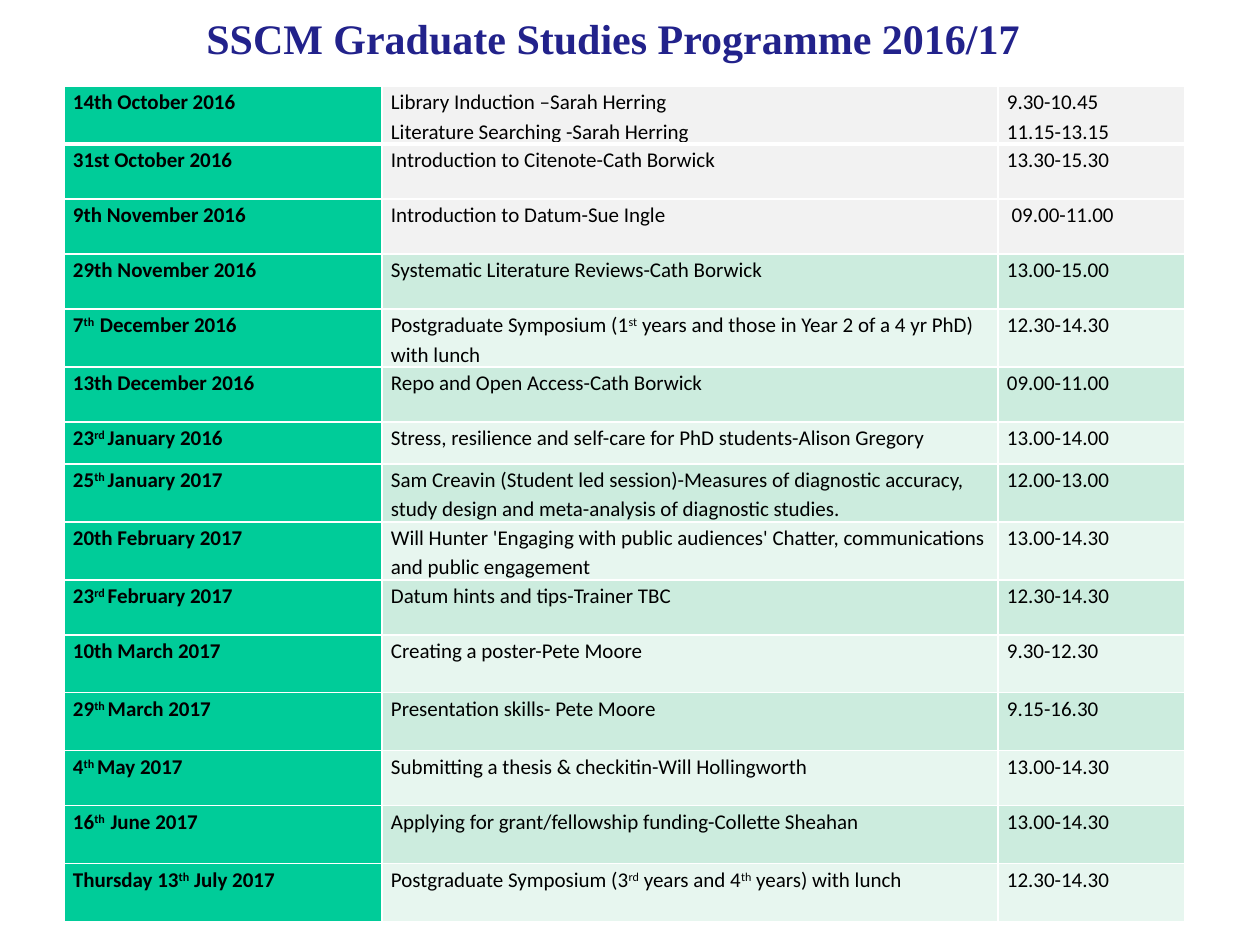
from dataclasses import dataclass

from lxml import etree
from pptx import Presentation
from pptx.dml.color import RGBColor
from pptx.oxml.ns import qn
from pptx.util import Pt

SCALE = 914400 / 126
LEFT, TOP = 64, 86
COLS = (318, 616, 187)
TALL, MID, LOW = 58, 55, 42
GREEN, GREY, MINT, PALE = "00CC99", "F2F2F2", "CCECDE", "E7F6EF"
WHITE, BLACK, NAVY = "FFFFFF", "000000", "22228B"


@dataclass
class Row:
    date: str
    topic: str
    time: str
    high: int = MID


ROWS = [
    Row("14th October 2016",
        "Library Induction –Sarah Herring\nLiterature Searching -Sarah Herring",
        "9.30-10.45\n11.15-13.15", 57),
    Row("31st October 2016", "Introduction to Citenote-Cath Borwick", "13.30-15.30"),
    Row("9th November 2016", "Introduction to Datum-Sue Ingle", " 09.00-11.00"),
    Row("29th November 2016", "Systematic Literature Reviews-Cath Borwick", "13.00-15.00"),
    Row("7^th  ^December 2016",
        "Postgraduate Symposium (1^st^ years and those in Year 2 of a 4 yr PhD) with lunch",
        "12.30-14.30", TALL),
    Row("13th December 2016", "Repo and Open Access-Cath Borwick", "09.00-11.00"),
    Row("23^rd ^January 2016",
        "Stress, resilience and self-care for PhD students-Alison Gregory",
        "13.00-14.00", LOW),
    Row("25^th ^January 2017",
        "Sam Creavin (Student led session)-Measures of diagnostic accuracy, "
        "study design and meta-analysis of diagnostic studies.",
        "12.00-13.00", TALL),
    Row("20th February 2017",
        "Will Hunter 'Engaging with public audiences' Chatter, communications "
        "and public engagement",
        "13.00-14.30", TALL),
    Row("23^rd ^February 2017", "Datum hints and tips-Trainer TBC", "12.30-14.30"),
    Row("10th March 2017", "Creating a poster-Pete Moore", "9.30-12.30", TALL),
    Row("29^th ^March 2017", "Presentation skills- Pete Moore", "9.15-16.30", TALL),
    Row("4^th ^May 2017", "Submitting a thesis & checkitin-Will Hollingworth", "13.00-14.30"),
    Row("16^th  ^June 2017", "Applying for grant/fellowship funding-Collette Sheahan",
        "13.00-14.30", TALL),
    Row("Thursday 13^th^ July 2017",
        "Postgraduate Symposium (3^rd^ years and 4^th^ years) with lunch",
        "12.30-14.30", TALL),
]


def px(num: int) -> int:
    return round(num * SCALE)


def paint(target, tint: str) -> None:
    target.rgb = RGBColor.from_string(tint)


def write(frame, text: str, *, font="Calibri", size=12, tint=BLACK,
          bold=False, space=None) -> None:
    for pos, line in enumerate(text.split("\n")):
        para = frame.add_paragraph() if pos else frame.paragraphs[0]
        para.line_spacing = space
        for part, piece in enumerate(line.split("^")):
            run = para.add_run()
            run.text = piece
            run.font.name, run.font.size, run.font.bold = font, Pt(size), bold
            paint(run.font.color, tint)
            if part % 2:
                run.font._element.set("baseline", "30000")


def edge(cell, side: str, width: int) -> None:
    props = cell._tc.get_or_add_tcPr()
    line = etree.SubElement(props, qn(f"a:ln{side}"), w=str(Pt(width)))
    fill = etree.SubElement(line, qn("a:solidFill"))
    etree.SubElement(fill, qn("a:srgbClr"), val=WHITE)


def dress(cell, text: str, tint: str, bold: bool, row: int) -> None:
    cell.margin_left = cell.margin_right = px(9)
    cell.margin_top = cell.margin_bottom = 0
    thick = {"T": 3 if row == 1 else 1, "B": 3 if row == 0 else 1}
    for side in "LRTB":
        edge(cell, side, thick.get(side, 1))
    cell.fill.solid()
    paint(cell.fill.fore_color, tint)
    write(cell.text_frame, text, bold=bold, space=1.15)


def shade(row: int) -> str:
    if row < 3:
        return GREY
    return MINT if row % 2 else PALE


def plan(slide) -> None:
    high = sum(row.high for row in ROWS)
    table = slide.shapes.add_table(
        len(ROWS), len(COLS), px(LEFT), px(TOP), px(sum(COLS)), px(high)).table
    for col, wide in zip(table.columns, COLS):
        col.width = px(wide)
    for num, row in enumerate(ROWS):
        table.rows[num].height = px(row.high)
        for col, text in enumerate((row.date, row.topic, row.time)):
            first = col == 0
            dress(table.cell(num, col), text, GREEN if first else shade(num), first, num)


def main() -> None:
    deck = Presentation()
    deck.slide_width, deck.slide_height = px(1260), px(945)
    slide = deck.slides.add_slide(deck.slide_layouts[6])
    title = slide.shapes.add_textbox(px(194), px(6), px(847), px(63)).text_frame
    title.word_wrap = True
    write(title, "SSCM Graduate Studies Programme 2016/17",
          font="Times New Roman", size=24, tint=NAVY, bold=True)
    plan(slide)
    deck.save("out.pptx")


if __name__ == "__main__":
    main()
